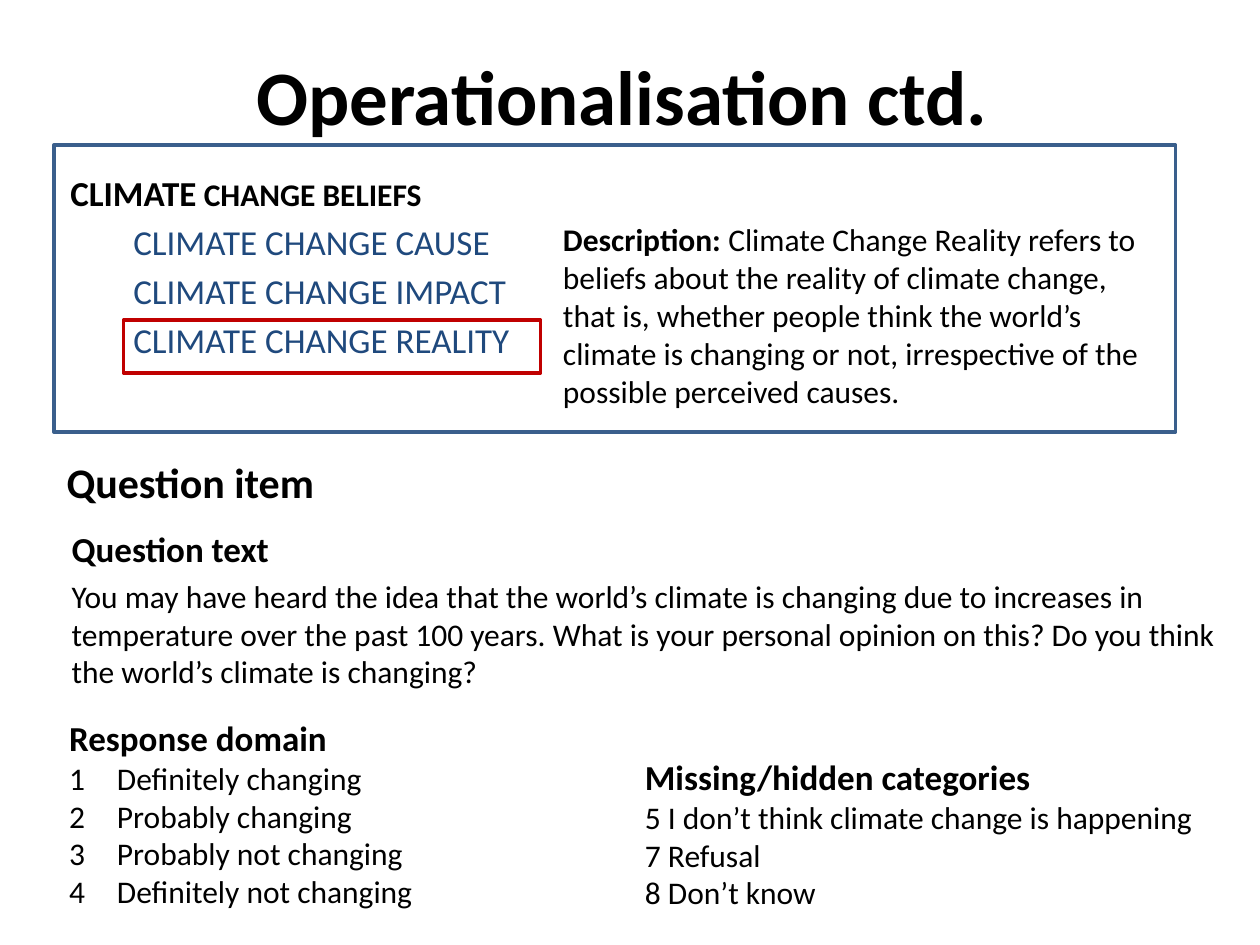
from dataclasses import dataclass

from lxml import etree
from pptx import Presentation
from pptx import util as u
from pptx.dml.color import RGBColor
from pptx.enum import shapes, text
from pptx.oxml.ns import qn


@dataclass(frozen=True)
class Theme:
    font: str = "Calibri"
    ink: str = "000000"
    concept: str = "1F497D"
    frame: str = "3A5F8C"
    highlight: str = "C00000"
    title: int = 44
    section: int = 24
    heading: int = 20
    body: int = 18
    line: int = 2
    gap: int = 4


T = Theme()
WIDTH, HEIGHT = u.Inches(10), u.Inches(7.5)

CONCEPTS = ["CLIMATE CHANGE CAUSE", "CLIMATE CHANGE IMPACT", "CLIMATE CHANGE REALITY"]
DESCRIPTION = (
    "Climate Change Reality refers to beliefs about the reality of climate change, "
    "that is, whether people think the world’s climate is changing or not, "
    "irrespective of the possible perceived causes."
)
QUESTION = (
    "You may have heard the idea that the world’s climate is changing due to increases in "
    "temperature over the past 100 years. What is your personal opinion on this? "
    "Do you think the world’s climate is changing?"
)
RESPONSES = ["Definitely changing", "Probably changing",
             "Probably not changing", "Definitely not changing"]
MISSING = ["5 I don’t think climate change is happening", "7 Refusal", "8 Don’t know"]


def area(x, y, w, h):
    """Turn percentages of the slide's size into left, top, width, height."""
    return [int(total * share / 100)
            for total, share in zip((WIDTH, HEIGHT, WIDTH, HEIGHT), (x, y, w, h))]


def style(r, size, bold=False, color=T.ink):
    r.font.name, r.font.size, r.font.bold = T.font, u.Pt(size), bold
    r.font.color.rgb = RGBColor.from_string(color)


def add_run(p, words, size, bold=False, color=T.ink):
    r = p.add_run()
    r.text = words
    style(r, size, bold, color)


def add_text(s, box, lines, size=T.body, color=T.ink, heading=T.heading, gap=0):
    """Add a text box with a bold heading line, then plain lines."""
    tf = s.shapes.add_textbox(*area(*box)).text_frame
    tf.word_wrap = True
    tf.text = "\n".join(lines)
    for i, p in enumerate(tf.paragraphs):
        p.space_before = u.Pt(gap)
        for r in p.runs:
            if i == 0:
                style(r, heading, bold=True)
            else:
                style(r, size, color=color)
    return tf


def add_frame(s, box, color):
    sp = s.shapes.add_shape(shapes.MSO_SHAPE.RECTANGLE, *area(*box))
    sp.shadow.inherit = False
    sp.fill.background()
    sp.line.color.rgb = RGBColor.from_string(color)
    sp.line.width = u.Pt(T.line)


def indent(p, left, first=0):
    pPr = p._p.get_or_add_pPr()
    pPr.set("marL", str(u.Inches(left)))
    pPr.set("indent", str(u.Inches(first)))
    return pPr


def number(p):
    pPr = indent(p, 0.38, -0.38)
    etree.SubElement(pPr, qn("a:buFont"), typeface="+mj-lt")
    etree.SubElement(pPr, qn("a:buAutoNum"), type="arabicPlain")


def add_title(s, words):
    sp = s.shapes.title
    sp.left, sp.top, sp.width, sp.height = area(4.4, 1.73, 90, 16.67)
    tf = sp.text_frame
    tf.text = words
    tf.vertical_anchor = text.MSO_ANCHOR.MIDDLE
    p = tf.paragraphs[0]
    p.alignment = text.PP_ALIGN.CENTER
    style(p.runs[0], T.title, bold=True)


def add_beliefs(s):
    # Concept list with the current concept outlined
    tf = add_text(s, (4.6, 17.47, 90, 66), ["CLIMATE"] + CONCEPTS,
                  size=T.heading, color=T.concept, gap=T.gap)
    add_run(tf.paragraphs[0], " CHANGE BELIEFS", T.body, bold=True)
    for p in tf.paragraphs[1:]:
        p.level = 1
        indent(p, 0.5)
    add_frame(s, (9.8, 33.87, 33.1, 5.6), T.highlight)

    # Description of that concept
    tf = add_text(s, (43.7, 22.67, 48, 21.6), ["Description: "], heading=T.body)
    add_run(tf.paragraphs[0], DESCRIPTION, T.body)


def add_question(s):
    add_text(s, (4.7, 55.2, 95.5, 66), ["Question text", QUESTION], gap=T.gap)
    tf = add_text(s, (4.3, 42.67, 90, 16.67), ["Question item"], heading=T.section)
    tf.vertical_anchor = text.MSO_ANCHOR.MIDDLE


def add_answers(s):
    add_text(s, (50.2, 79.33, 45.7, 18), ["Missing/hidden categories"] + MISSING)
    tf = add_text(s, (4.5, 75.2, 63.2, 26), ["Response domain"] + RESPONSES)
    for p in tf.paragraphs[1:]:
        number(p)


def main():
    prs = Presentation()
    prs.slide_width, prs.slide_height = WIDTH, HEIGHT
    s = prs.slides.add_slide(prs.slide_layouts[5])
    add_title(s, "Operationalisation ctd.")
    add_beliefs(s)
    add_question(s)
    add_frame(s, (4.3, 15.33, 89, 30.4), T.frame)
    add_answers(s)
    prs.save("out.pptx")


if __name__ == "__main__":
    main()
